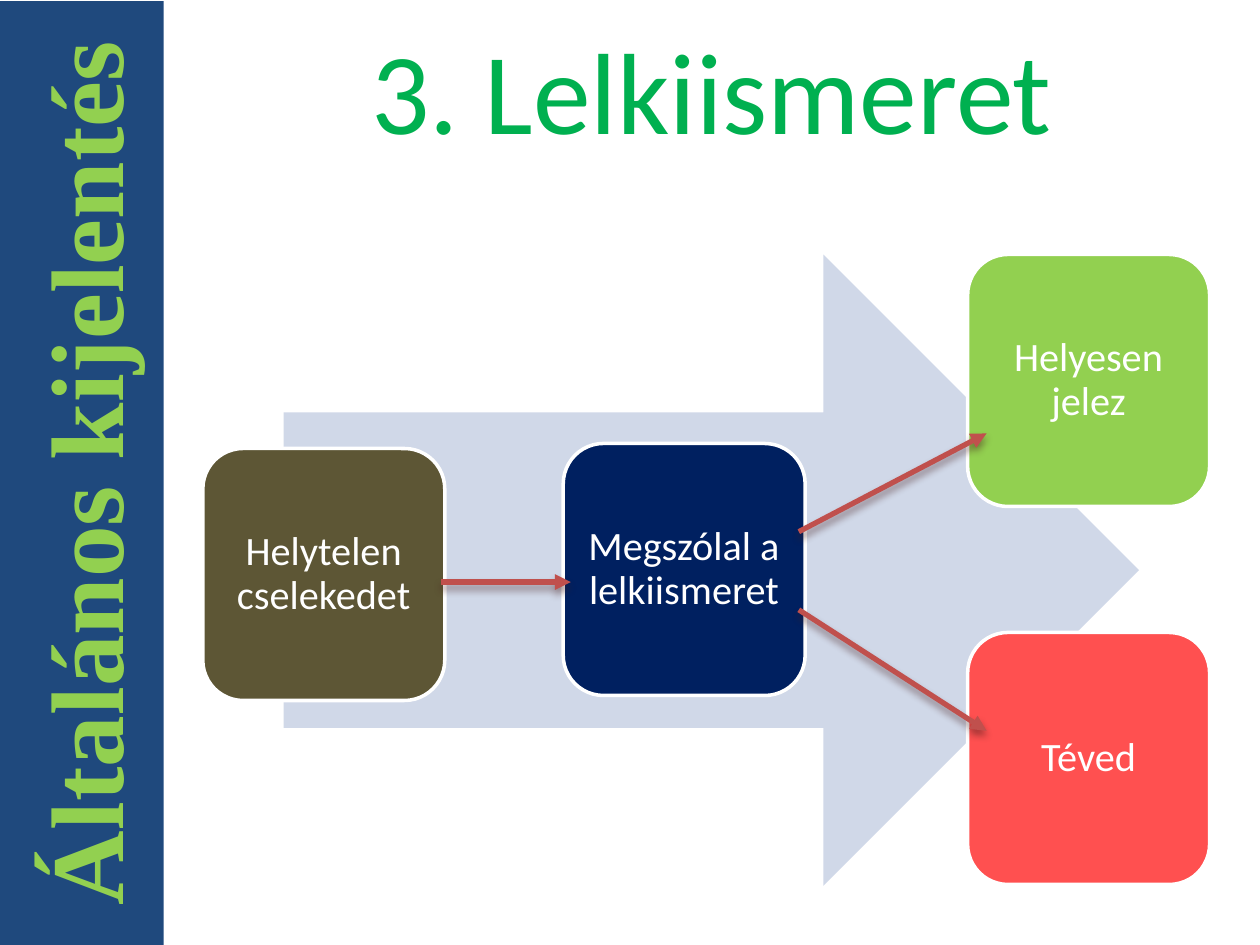
from lxml import etree
from pptx import Presentation
from pptx.dml.color import RGBColor
from pptx.enum.shapes import MSO_CONNECTOR, MSO_SHAPE
from pptx.enum.text import MSO_ANCHOR, PP_ALIGN
from pptx.oxml import parse_xml
from pptx.oxml.ns import nsdecls, qn
from pptx.util import Inches, Pt

RECTANGLE = MSO_SHAPE.RECTANGLE
ROUNDED = MSO_SHAPE.ROUNDED_RECTANGLE
RIGHT_ARROW = MSO_SHAPE.RIGHT_ARROW
STRAIGHT = MSO_CONNECTOR.STRAIGHT
CENTER = PP_ALIGN.CENTER
MIDDLE = MSO_ANCHOR.MIDDLE

SIDEBAR_WIDTH = 1.3
CARD_SIZE = (1.92, 2)
CARDS = [
    ("Helytelen cselekedet", 1.61, 3.56, "5D5635"),
    ("Megszólal a lelkiismeret", 4.47, 3.52, "002060"),
    ("Helyesen jelez", 7.68, 2.02, "92D050"),
    ("Téved", 7.68, 5.02, "FF5050"),
]
LINKS = [
    ((3.5, 4.62), (4.53, 4.62)),
    ((6.34, 4.22), (7.83, 3.44)),
    ((6.34, 4.84), (7.83, 5.8)),
]
SHADOW_XML = (
    f'<a:effectLst {nsdecls("a")}>'
    '<a:outerShdw blurRad="57150" dist="38100" dir="5400000" algn="ctr" rotWithShape="0">'
    '<a:srgbClr val="441B1A"><a:alpha val="48000"/></a:srgbClr>'
    '</a:outerShdw></a:effectLst>'
)


def rgb(value):
    """Turn a hex string into a colour."""
    return RGBColor.from_string(value)


def write(shape, text, size, color, font="Calibri", bold=False, spacing=1.0, inset=0.1):
    """Put one centred paragraph into a shape."""
    frame = shape.text_frame
    frame.text = text
    margin = Inches(inset)
    frame_format = {
        "word_wrap": True, "vertical_anchor": MIDDLE,
        "margin_left": margin, "margin_right": margin,
        "margin_top": margin, "margin_bottom": margin,
    }
    for name, value in frame_format.items():
        setattr(frame, name, value)
    paragraph = frame.paragraphs[0]
    paragraph.alignment = CENTER
    paragraph.line_spacing = spacing
    run = paragraph.runs[0]
    for name, value in {"size": Pt(size), "name": font, "bold": bold}.items():
        setattr(run.font, name, value)
    run.font.color.rgb = rgb(color)


def add_block(slide, kind, box, fill, outline=None):
    """Add a flat filled shape, outlined if a colour is given."""
    block = slide.shapes.add_shape(kind, *map(Inches, box))
    block.shadow.inherit = False
    block.fill.solid()
    block.fill.fore_color.rgb = rgb(fill)
    if outline:
        block.line.color.rgb = rgb(outline)
        block.line.width = Pt(2)
    else:
        block.line.fill.background()
    return block


def add_title(slide, box):
    """Place and fill the title placeholder."""
    title = slide.shapes.title
    for name, value in zip(("left", "top", "width", "height"), box):
        setattr(title, name, Inches(value))
    write(title, "3. Lelkiismeret", 66, "00B050")


def add_sidebar(slide, box):
    """Add the side band with its upward reading label."""
    sidebar = add_block(slide, RECTANGLE, box, "1F497D")
    write(sidebar, "Általános kijelentés", 59, "92D050", "Times New Roman", True, inset=0.05)
    sidebar.text_frame._txBody.bodyPr.set("vert", "vert270")


def add_link(slide, start, end):
    """Add a shadowed arrow from start to end."""
    link = slide.shapes.add_connector(STRAIGHT, *map(Inches, start + end))
    link.line.color.rgb = rgb("C0504D")
    link.line.width = Pt(3)
    etree.SubElement(link.line._get_or_add_ln(), qn("a:tailEnd"), type="triangle")
    link._element.spPr.append(parse_xml(SHADOW_XML))


def add_process(slide, box):
    """Add the big arrow, the step cards and the links between them."""
    add_block(slide, RIGHT_ARROW, box, "D0D8E8")
    for text, left, top, fill in CARDS:
        card = add_block(slide, ROUNDED, (left, top, *CARD_SIZE), fill, "FFFFFF")
        write(card, text, 23, "FFFFFF", spacing=0.9)
    for start, end in LINKS:
        add_link(slide, start, end)


def main():
    """Build and save the slide."""
    deck = Presentation()
    deck.slide_width, deck.slide_height = Inches(10), Inches(7.5)
    slide = deck.slides.add_slide(deck.slide_layouts[5])
    add_title(slide, (SIDEBAR_WIDTH, 0, 10 - SIDEBAR_WIDTH, 1.4))
    add_sidebar(slide, (0, 0.01, SIDEBAR_WIDTH, 7.49))
    add_process(slide, (2.25, 2.02, 6.79, 5.01))
    deck.save("out.pptx")


if __name__ == "__main__":
    main()
